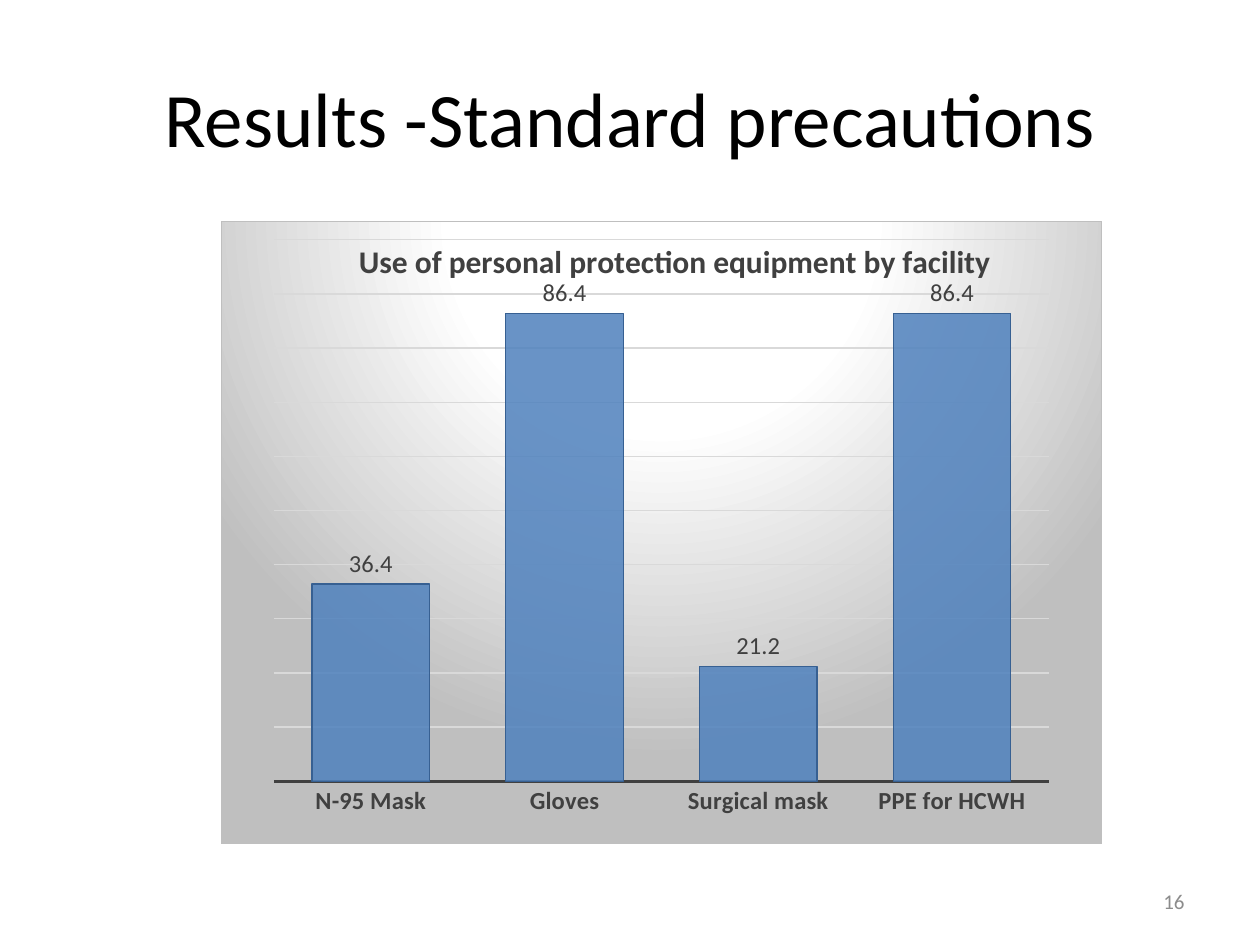
from pptx import Presentation
from pptx import util as u
from pptx.chart.data import CategoryChartData
from pptx.dml.color import RGBColor
from pptx.enum import chart as charts, text
from pptx.oxml import parse_xml
from pptx.oxml.ns import nsdecls, qn


def style_font(font, size, color, bold=False):
    font.name = "Calibri"
    font.size = u.Pt(size)
    font.bold = bold
    font.color.rgb = RGBColor.from_string(color)


def set_layout(parent, target, **fractions):
    for old in parent.findall(qn("c:layout")):
        parent.remove(old)
    inner = f'<c:layoutTarget val="{target}"/>' if target else ""
    modes = "".join(f'<c:{key}Mode val="edge"/>' for key in "xy")
    values = "".join(f'<c:{key} val="{value}"/>' for key, value in fractions.items())
    layout = parse_xml(
        f'<c:layout {nsdecls("c")}><c:manualLayout>{inner}{modes}{values}'
        "</c:manualLayout></c:layout>"
    )
    text_element = parent.find(qn("c:tx"))
    if text_element is None:
        parent.insert(0, layout)
    else:
        text_element.addnext(layout)


presentation = Presentation()
presentation.slide_width = u.Inches(10)
presentation.slide_height = u.Inches(7.5)
slide = presentation.slides.add_slide(presentation.slide_layouts[5])

title = slide.shapes.title
title.left, title.top = u.Inches(0.5), u.Inches(0.3)
title.width, title.height = u.Inches(9), u.Inches(1.25)
title.text_frame.text = "Results -Standard precautions"
title.text_frame.vertical_anchor = text.MSO_ANCHOR.MIDDLE
paragraph = title.text_frame.paragraphs[0]
paragraph.alignment = text.PP_ALIGN.CENTER
style_font(paragraph.font, 44, "000000")

data = CategoryChartData(number_format="0.0")
data.categories = ["N-95 Mask", "Gloves", "Surgical mask", "PPE for HCWH"]
data.add_series("Series 1", [36.4, 86.4, 21.2, 86.4])
chart = slide.shapes.add_chart(
    charts.XL_CHART_TYPE.COLUMN_CLUSTERED,
    u.Inches(1.75), u.Inches(1.75), u.Inches(7), u.Inches(4.95), data,
).chart
style_font(chart.font, 10, "000000")
chart.has_legend = False

chart.has_title = True
chart_title = chart.chart_title
chart_title.text_frame.text = "Use of personal protection equipment by facility"
style_font(chart_title.text_frame.paragraphs[0].font, 18, "404040", True)
title_element = chart_title._element
set_layout(title_element, None, x=0.15, y=0.02)
title_element.find(qn("c:overlay")).set("val", "1")

category_axis = chart.category_axis
category_axis.major_tick_mark = charts.XL_TICK_MARK.NONE
category_axis.format.line.color.rgb = RGBColor.from_string("404040")
category_axis.format.line.width = u.Pt(1.5)
style_font(category_axis.tick_labels.font, 14, "404040", True)

value_axis = chart.value_axis
value_axis.visible = False
value_axis.minimum_scale, value_axis.maximum_scale = 0, 100
value_axis.major_unit = 10
value_axis.tick_labels.number_format = "0.0"
value_axis.tick_labels.number_format_is_linked = False
gridline = value_axis.major_gridlines.format.line
gridline.color.rgb = RGBColor.from_string("D9D9D9")
gridline.width = u.Pt(0.75)

plot = chart.plots[0]
plot.gap_width = 65
plot.vary_by_categories = False
plot.has_data_labels = True
labels = plot.data_labels
labels.show_value = True
labels.position = charts.XL_LABEL_POSITION.OUTSIDE_END
labels.number_format = "0.0"
labels.number_format_is_linked = False
style_font(labels.font, 14, "404040")

bars = plot.series[0].format
bars.fill.solid()
bars.fill.fore_color.rgb = RGBColor.from_string("4F81BD")
bars.line.color.rgb = RGBColor.from_string("376092")
bars.line.width = u.Pt(0.75)
bar_color = plot.series[0]._element.find(qn("c:spPr")).find(qn("a:solidFill"))[0]
bar_color.append(parse_xml(f'<a:alpha {nsdecls("a")} val="85000"/>'))

chart_space = chart._chartSpace
chart_element = chart_space.find(qn("c:chart"))
set_layout(chart_element.find(qn("c:plotArea")), "inner", x=0.06, y=0.03, w=0.88, h=0.87)
stops = "".join(
    f'<a:gs pos="{position * 1000}"><a:srgbClr val="{color}"/></a:gs>'
    for position, color in [(0, "FFFFFF"), (39, "FFFFFF"), (100, "BFBFBF")]
)
chart_element.addnext(parse_xml(
    f'<c:spPr {nsdecls("c", "a")}><a:gradFill><a:gsLst>{stops}</a:gsLst>'
    '<a:path path="circle"><a:fillToRect l="50000" t="-80000" r="50000" b="180000"/></a:path>'
    '</a:gradFill><a:ln w="9525"><a:solidFill><a:srgbClr val="BFBFBF"/></a:solidFill></a:ln>'
    "</c:spPr>"
))

number_box = slide.shapes.add_textbox(u.Inches(7.17), u.Inches(6.95), u.Inches(2.33), u.Inches(0.4))
number_box.text_frame.word_wrap = True
number_box.text_frame.vertical_anchor = text.MSO_ANCHOR.MIDDLE
paragraph = number_box.text_frame.paragraphs[0]
paragraph.text = "16"
paragraph.alignment = text.PP_ALIGN.RIGHT
style_font(paragraph.font, 12, "8C8C8C")

presentation.save("out.pptx")
